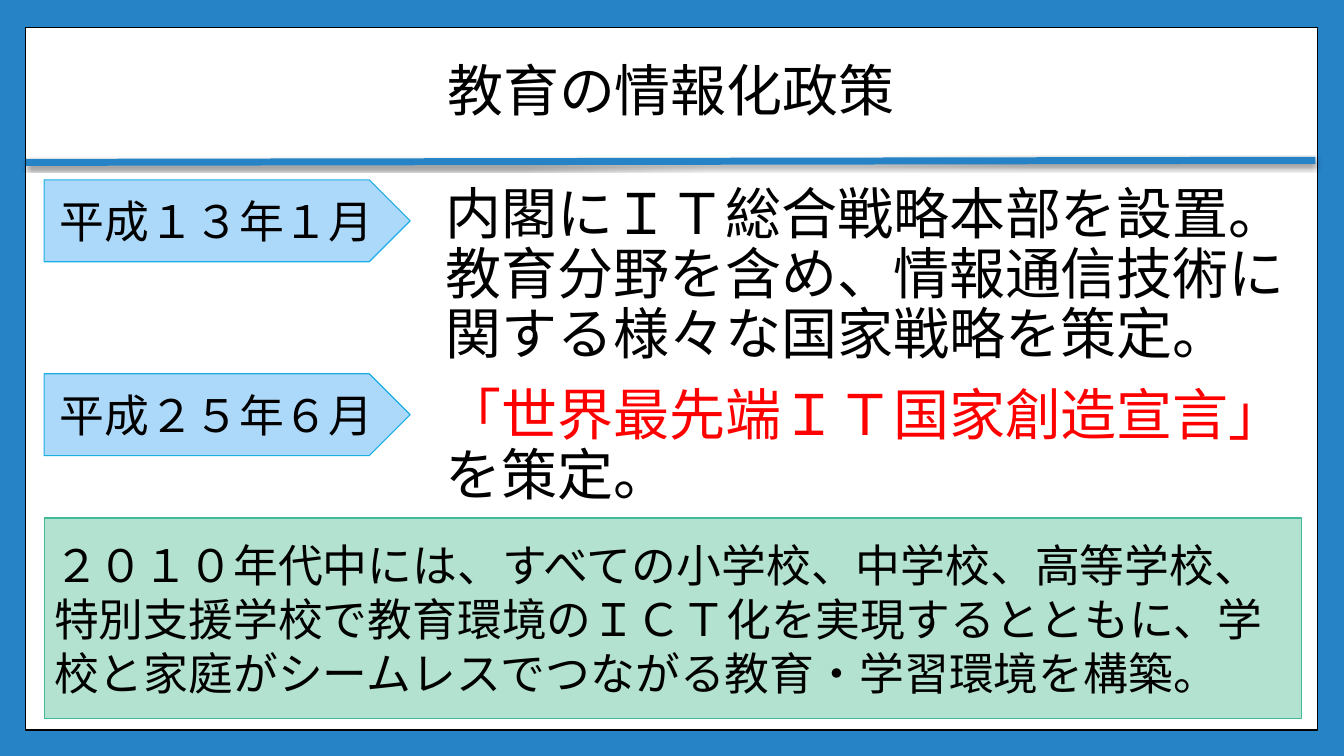
from lxml.etree import SubElement
from pptx import Presentation
from pptx.dml.color import RGBColor
from pptx.enum.shapes import MSO_CONNECTOR, MSO_SHAPE
from pptx.enum.text import MSO_ANCHOR, MSO_AUTO_SIZE, PP_ALIGN
from pptx.oxml.ns import qn
from pptx.util import Pt

BLUE = RGBColor(0x26, 0x83, 0xC6)
WHITE = RGBColor(0xFF, 0xFF, 0xFF)
BLACK = RGBColor(0x00, 0x00, 0x00)
RED = RGBColor(0xFF, 0x00, 0x00)
DATE_FILL = RGBColor(0xAC, 0xD8, 0xFA)
DATE_LINE = RGBColor(0x1C, 0xAD, 0xE4)
GOAL_FILL = RGBColor(0xB3, 0xE2, 0xD0)
GOAL_LINE = RGBColor(0x42, 0xBA, 0x97)

TITLE = "教育の情報化政策"
DATES = ["平成１３年１月", "平成２５年６月"]
POLICIES = [
    [("内閣にＩＴ総合戦略本部を設置。教育分野を含め、情報通信技術に関する様々な国家戦略を策定。", BLACK)],
    [("「世界最先端ＩＴ国家創造宣言」", RED), ("を策定。", BLACK)],
]
GOAL = ("２０１０年代中には、すべての小学校、中学校、高等学校、特別支援学校で教育環境の"
        "ＩＣＴ化を実現するとともに、学校と家庭がシームレスでつながる教育・学習環境を構築。")


def format_run(run, size, font_name, color=BLACK):
    run.font.size = Pt(size)
    run.font.name = font_name
    run.font.color.rgb = color


def place(shape, box):
    shape.left, shape.top, shape.width, shape.height = (Pt(length) for length in box)


def add_box(slide, kind, box, fill, line, line_width):
    shape = slide.shapes.add_shape(kind, *(Pt(length) for length in box))
    shape.shadow.inherit = False
    shape.fill.solid()
    shape.fill.fore_color.rgb = fill
    shape.line.color.rgb = line
    shape.line.width = Pt(line_width)
    return shape


def add_label(slide, kind, box, fill, line, text, alignment):
    shape = add_box(slide, kind, box, fill, line, 0.79)
    frame = shape.text_frame
    frame.text = text
    frame.word_wrap = True
    frame.vertical_anchor = MSO_ANCHOR.MIDDLE
    paragraph = frame.paragraphs[0]
    paragraph.alignment = alignment
    format_run(paragraph.runs[0], 32, "Arial")


def add_background(slide, box):
    """White panel with a shadowed rule under the title, behind everything."""
    left, top, width, height = box
    slide.background.fill.solid()
    slide.background.fill.fore_color.rgb = BLUE
    panel = add_box(slide, MSO_SHAPE.RECTANGLE, box, WHITE, BLACK, 1)

    rule = slide.shapes.add_connector(
        MSO_CONNECTOR.STRAIGHT, Pt(left + 0.5), Pt(top + 96.5),
        Pt(left + width - 1.5), Pt(top + 95))
    rule.line.color.rgb = BLUE
    rule.line.width = Pt(5)
    effects = SubElement(rule.element.spPr, qn("a:effectLst"))
    shadow = SubElement(effects, qn("a:outerShdw"), blurRad=str(Pt(3)),
                        dist=str(Pt(2)), dir="5400000", rotWithShape="0")
    color = SubElement(shadow, qn("a:srgbClr"), val=str(BLACK))
    SubElement(color, qn("a:alpha"), val="45000")

    tree = panel.element.getparent()
    tree.insert(2, panel.element)
    tree.insert(3, rule.element)


def fill_title(slide, box):
    title = slide.shapes.title
    place(title, box)
    frame = title.text_frame
    frame.text = TITLE
    frame.auto_size = MSO_AUTO_SIZE.NONE
    frame.vertical_anchor = MSO_ANCHOR.MIDDLE
    paragraph = frame.paragraphs[0]
    paragraph.alignment = PP_ALIGN.CENTER
    paragraph.line_spacing = 0.9
    format_run(paragraph.runs[0], 40, "Roboto")


def fill_policies(slide, box):
    body = slide.placeholders[1]
    place(body, box)
    frame = body.text_frame
    frame.auto_size = MSO_AUTO_SIZE.NONE
    frame.vertical_anchor = MSO_ANCHOR.TOP
    for index, policy in enumerate(POLICIES):
        paragraph = frame.add_paragraph() if index else frame.paragraphs[0]
        paragraph.line_spacing = 0.9
        paragraph.space_before = Pt(14)
        paragraph.space_after = Pt(0)
        for text, color in policy:
            run = paragraph.add_run()
            run.text = text
            format_run(run, 40, "Arial", color)
        # Plain paragraph with a slight indent
        properties = paragraph._p.get_or_add_pPr()
        properties.set("marL", str(Pt(3.6)))
        properties.set("indent", "0")
        SubElement(properties, qn("a:buNone"))


def add_dates(slide, box, pitch):
    left, top, width, height = box
    for index, date in enumerate(DATES):
        add_label(slide, MSO_SHAPE.PENTAGON, (left, top + index * pitch, width, height),
                  DATE_FILL, DATE_LINE, date, PP_ALIGN.CENTER)


def add_goal(slide, box):
    add_label(slide, MSO_SHAPE.RECTANGLE, box, GOAL_FILL, GOAL_LINE, GOAL, PP_ALIGN.LEFT)


def main():
    presentation = Presentation()
    presentation.slide_width = Pt(960)
    presentation.slide_height = Pt(540)
    slide = presentation.slides.add_slide(presentation.slide_layouts[1])
    add_background(slide, (18, 19.5, 923, 502))
    fill_title(slide, (18.5, 26, 921.5, 82))
    fill_policies(slide, (307.5, 129, 632, 384.5))
    add_dates(slide, (31.5, 128.5, 261.5, 58.5), 138.5)
    add_goal(slide, (31.5, 370, 898, 143.5))
    presentation.save("out.pptx")


if __name__ == "__main__":
    main()
